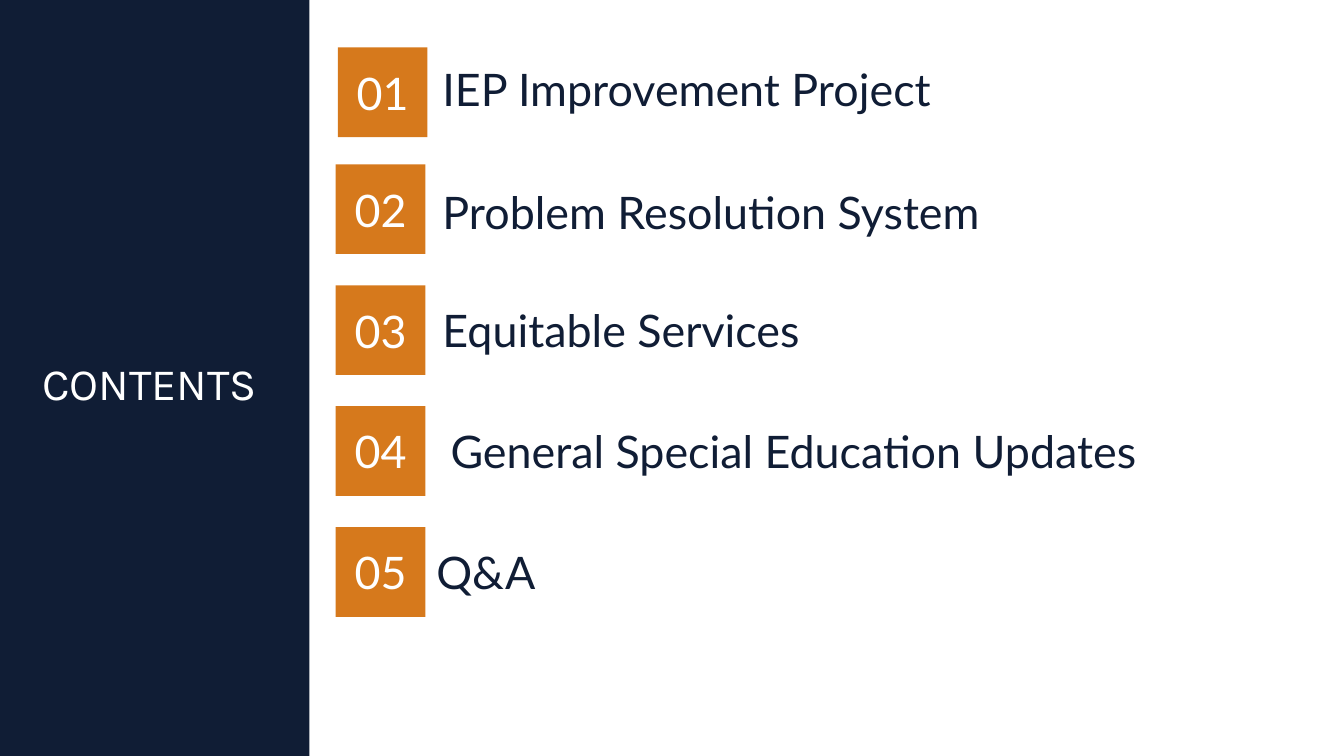
"""Build a contents slide with a dark side panel and five numbered topics."""
import pptx
import pptx.util
import pptx.dml.color
import pptx.enum.shapes
import pptx.enum.text

COLORS = {"navy": "101D35", "orange": "D6791C", "white": "FFFFFF"}
Inches = pptx.util.Inches

deck = pptx.Presentation()
deck.slide_width, deck.slide_height = Inches(13.33), Inches(7.5)
slide = deck.slides.add_slide(deck.slide_layouts[6])


def add_block(left, top, width, height, color):
    block = slide.shapes.add_shape(
        pptx.enum.shapes.MSO_SHAPE.RECTANGLE,
        Inches(left), Inches(top), Inches(width), Inches(height))
    block.shadow.inherit = False
    block.fill.solid()
    block.fill.fore_color.rgb = pptx.dml.color.RGBColor.from_string(COLORS[color])
    block.line.fill.background()
    return block


def write(holder, text, font, color, align=pptx.enum.text.PP_ALIGN.LEFT):
    frame = holder.text_frame
    frame.text = text
    frame.word_wrap = True
    frame.vertical_anchor = pptx.enum.text.MSO_ANCHOR.MIDDLE
    paragraph = frame.paragraphs[0]
    paragraph.alignment = align
    style = paragraph.runs[0].font
    style.name, style.size = font, pptx.util.Pt(32)
    style.color.rgb = pptx.dml.color.RGBColor.from_string(COLORS[color])
    return paragraph


add_block(0, 0, 3.07, 7.5, "navy")
heading = slide.shapes.add_textbox(Inches(0.32), Inches(3.1), Inches(2.76), Inches(1.45))
write(heading, "CONTENTS", "Karla", "white").line_spacing = 0.9

first_row, row_pitch, badge_side = 0.43, 1.2, 0.89
badge_left, topic_left = 3.33, 4.29
topics = [
    ("IEP Improvement Project", 0, 8.73, 0.89),
    ("Problem Resolution System", 0, 8.73, 0.93),
    ("Equitable Services", 0, 8.73, 0.83),
    ("General Special Education Updates", 0.08, 8.64, 0.89),
    ("Q&A", -0.06, 8.64, 0.56),
]

for index, (topic, indent, width, height) in enumerate(topics):
    row_top = first_row + index * row_pitch
    badge_shift = (0.02, 0.04) if index == 0 else (0, 0)
    badge = add_block(badge_left + badge_shift[0], row_top + badge_shift[1],
                      badge_side, badge_side, "orange")
    write(badge, f"{index + 1:02d}", "Lato", "white", pptx.enum.text.PP_ALIGN.CENTER)
    topic_top = row_top + (badge_side - height) / 2 + (0.02 if index == 1 else 0)
    label = slide.shapes.add_textbox(
        Inches(topic_left + indent), Inches(topic_top), Inches(width), Inches(height))
    write(label, topic, "Lato", "navy")

deck.save("out.pptx")
